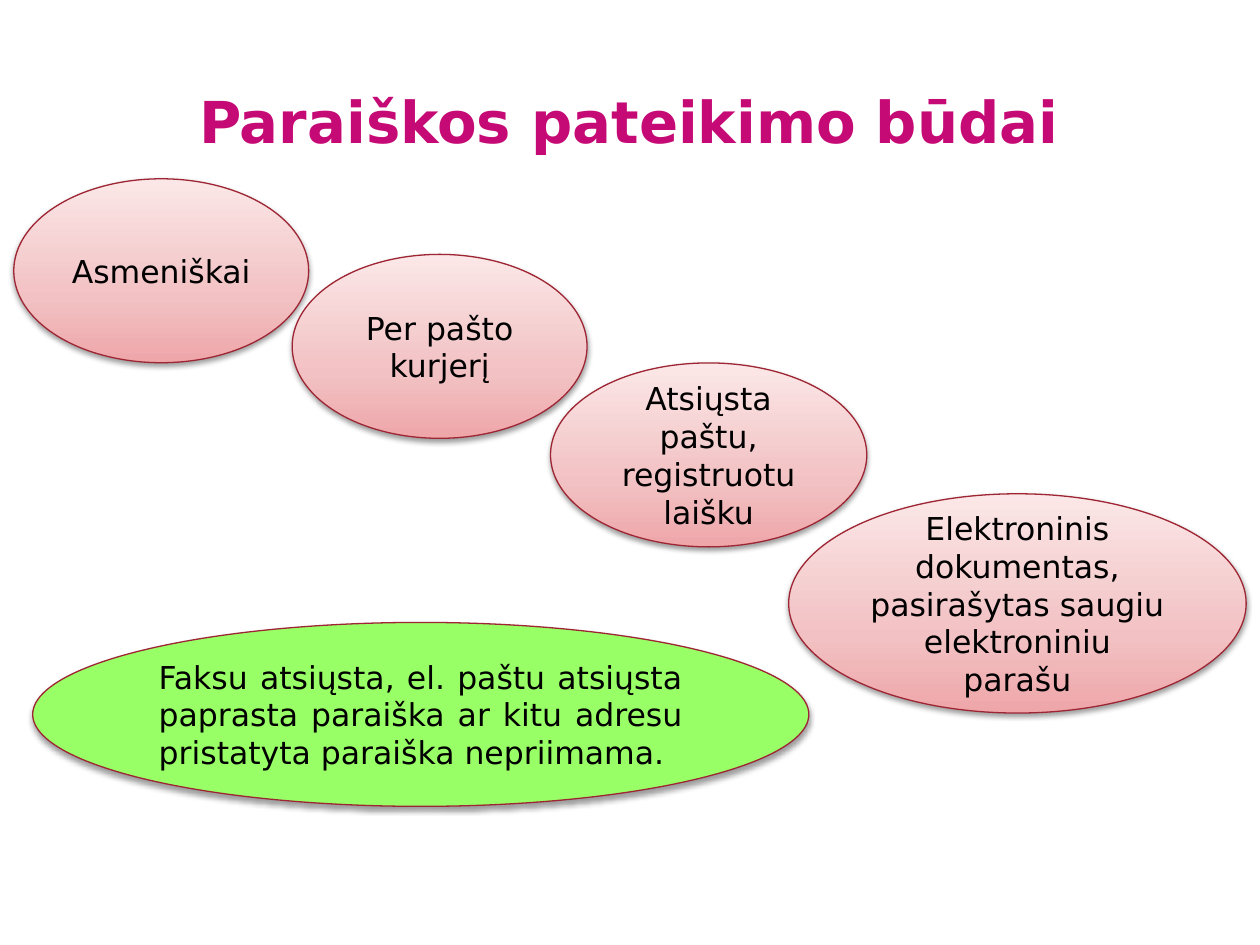
from lxml.etree import SubElement
from pptx import Presentation
from pptx.dml.color import RGBColor
from pptx.enum.shapes import MSO_SHAPE
from pptx.enum.text import MSO_ANCHOR, PP_ALIGN
from pptx.oxml.ns import qn
from pptx.util import Pt

PINK = [(0, "EEA6A9"), (35, "F2C1C3"), (100, "FBE7E7")]
GREEN = "99FF66"


def rgb(value):
    return RGBColor.from_string(value)


def add_node(parent, tag, **attrs):
    """Append a DrawingML element with the given attributes."""
    return SubElement(parent, qn(tag), {k: str(v) for k, v in attrs.items()})


prs = Presentation()
prs.slide_width, prs.slide_height = Pt(720), Pt(540)
s = prs.slides.add_slide(prs.slide_layouts[6])

# Title
title = s.shapes.add_textbox(Pt(76.3), Pt(43.2), Pt(566.6), Pt(62.6))
tf = title.text_frame
tf.word_wrap = True
tf.margin_top = Pt(6)
p = tf.paragraphs[0]
p.alignment = PP_ALIGN.CENTER
r = p.add_run()
r.text = "Paraiškos pateikimo būdai"
title_font = {"name": "DejaVu Sans", "size": Pt(33), "bold": True}
for key, value in title_font.items():
    setattr(r.font, key, value)
r.font.color.rgb = rgb("C60A75")

# Ways of applying step down the slide; the green ellipse holds the exception
ellipses = [
    ("Asmeniškai", 7.9, 102.2, 168.5, 105.1, PINK),
    ("Per pašto kurjerį", 167, 145.4, 168.5, 105.1, PINK),
    ("Atsiųsta paštu, registruotu laišku", 314.6, 207.4, 180.7, 105.1, PINK),
    ("Faksu atsiųsta, el. paštu atsiųsta paprasta paraiška ar kitu adresu "
     "pristatyta paraiška nepriimama.", 18.7, 355.7, 443.5, 105.1, GREEN),
    ("Elektroninis dokumentas, pasirašytas saugiu elektroniniu parašu",
     450.7, 282.2, 261.4, 125.3, PINK),
]
body_font = {"name": "DejaVu Sans", "size": Pt(18)}

for text, x, y, w, h, fill in ellipses:
    sp = s.shapes.add_shape(MSO_SHAPE.OVAL, Pt(x), Pt(y), Pt(w), Pt(h))
    if fill == GREEN:
        sp.fill.solid()
        sp.fill.fore_color.rgb = rgb(fill)
    else:
        sp.fill.gradient()
        sp.fill.gradient_angle = 90
        stops = sp._element.spPr.find(".//" + qn("a:gsLst"))
        for stop in list(stops):
            stops.remove(stop)
        for pos, color in fill:
            stop = add_node(stops, "a:gs", pos=pos * 1000)
            add_node(stop, "a:srgbClr", val=color)
    sp.line.color.rgb = rgb("9E2533")
    sp.line.width = Pt(0.75)

    sp.shadow.inherit = False
    effects = sp._element.spPr.find(qn("a:effectLst"))
    shadow = add_node(effects, "a:outerShdw", blurRad=Pt(3.1), dist=Pt(1.6),
                      dir=90 * 60000, rotWithShape=0)
    color = add_node(shadow, "a:srgbClr", val="000000")
    add_node(color, "a:alpha", val=38000)

    tf = sp.text_frame
    tf.word_wrap = True
    tf.vertical_anchor = MSO_ANCHOR.MIDDLE
    p = tf.paragraphs[0]
    p.alignment = PP_ALIGN.JUSTIFY if fill == GREEN else PP_ALIGN.CENTER
    r = p.add_run()
    r.text = text
    for key, value in body_font.items():
        setattr(r.font, key, value)
    r.font.color.rgb = rgb("000000")

prs.save("out.pptx")
